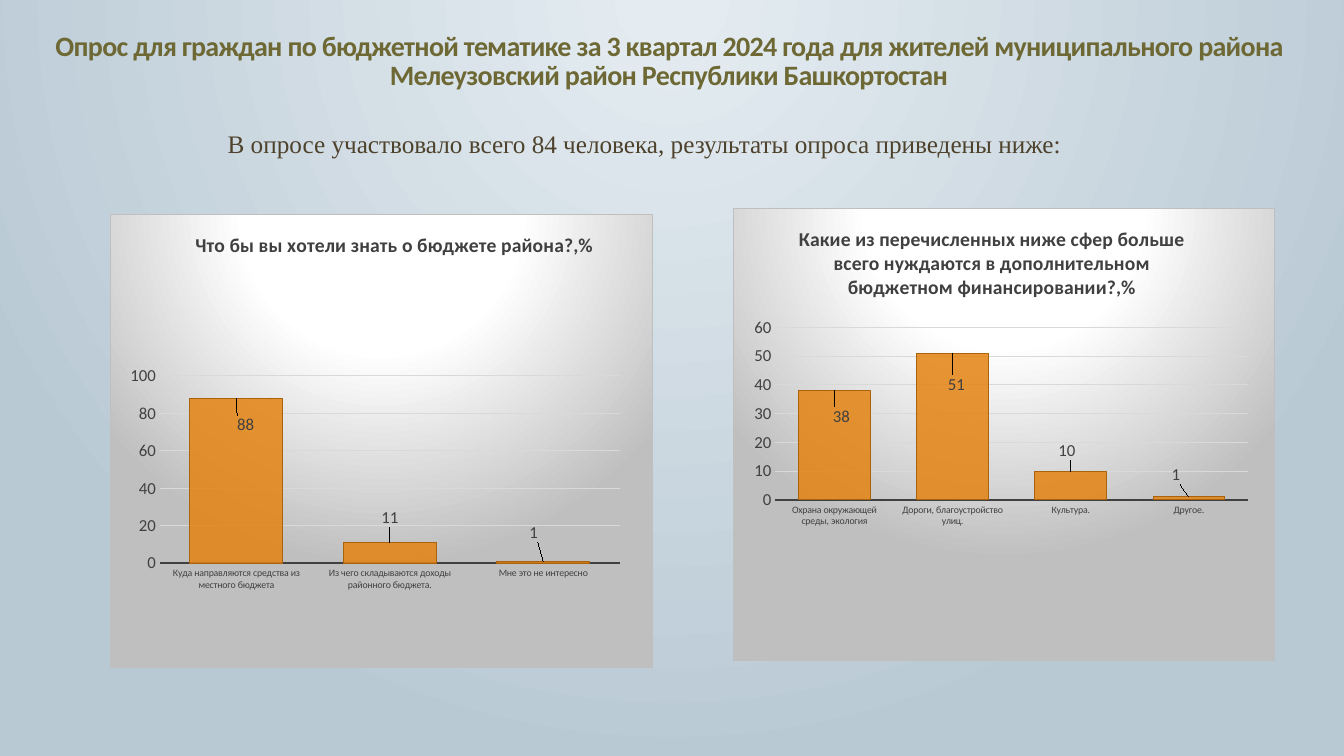
from dataclasses import dataclass

from lxml.etree import SubElement
from pptx import Presentation
from pptx.chart.data import CategoryChartData
from pptx.dml.color import RGBColor
from pptx.enum.chart import XL_CHART_TYPE, XL_LABEL_POSITION, XL_TICK_MARK
from pptx.enum.text import MSO_ANCHOR, PP_ALIGN
from pptx.oxml import parse_xml
from pptx.oxml.ns import nsdecls, qn
from pptx.util import Pt


@dataclass(frozen=True)
class Theme:
    heading: str = "6D6834"
    intro: str = "4E422C"
    chart_text: str = "404040"
    grid: str = "D9D9D9"
    border: str = "BFBFBF"
    bar: str = "E48312"
    bar_line: str = "AB620D"
    slide_stops: tuple = ((3, "E4ECF1"), (100, "B9C9D4"))
    chart_stops: tuple = ((0, "FFFFFF"), (39, "FFFFFF"), (100, "BFBFBF"))
    sans: str = "Calibri"
    serif: str = "Times New Roman"
    heading_size: int = 20
    intro_size: int = 18
    title_size: int = 14
    value_size: int = 12
    category_size: int = 7


@dataclass(frozen=True)
class Box:
    left: float
    top: float
    width: float
    height: float

    def lengths(self) -> tuple:
        return Pt(self.left), Pt(self.top), Pt(self.width), Pt(self.height)


@dataclass(frozen=True)
class Answer:
    text: str
    percent: int
    label_shift: tuple[float, float]


@dataclass(frozen=True)
class Question:
    text: str
    box: Box
    title_at: tuple[float, float]
    plot_area: tuple[float, float, float, float]
    axis_max: int
    axis_step: int
    answers: tuple[Answer, ...]


THEME = Theme()

QUESTIONS = (
    Question(
        "Что бы вы хотели знать о бюджете района?,%",
        Box(78.5, 152.5, 388, 324.7), (0.15, 0.03),
        (0.091, 0.357, 0.849, 0.413), 100, 20,
        (
            Answer("Куда направляются средства из местного бюджета", 88, (0.017, 0.09)),
            Answer("Из чего складываются доходы районного бюджета.", 11, (0, -0.024)),
            Answer("Мне это не интересно", 1, (-0.018, -0.033)),
        ),
    ),
    Question(
        "Какие из перечисленных ниже сфер больше всего нуждаются "
        "в дополнительном бюджетном финансировании?,%",
        Box(523.3, 148.5, 387.5, 324), (0.115, 0.03),
        (0.078, 0.263, 0.873, 0.381), 60, 10,
        (
            Answer("Охрана окружающей среды, экология", 38, (0.013, 0.088)),
            Answer("Дороги, благоустройство улиц.", 51, (0.007, 0.1)),
            Answer("Культура.", 10, (-0.007, -0.015)),
            Answer("Другое.", 1, (-0.024, -0.018)),
        ),
    ),
)


def style_font(font, name: str, size: int, color: str, bold: bool = False) -> None:
    font.name, font.size, font.bold = name, Pt(size), bold
    font.color.rgb = RGBColor.from_string(color)


def style_line(line, color: str, width: float) -> None:
    line.color.rgb = RGBColor.from_string(color)
    line.width = Pt(width)


def circle_gradient(stops: tuple, focus: tuple[int, int, int, int]):
    """Build a radial fill; focus is left, top, right, bottom in percent."""
    stop_xml = "".join(
        f'<a:gs pos="{pos * 1000}"><a:srgbClr val="{color}"/></a:gs>' for pos, color in stops
    )
    sides = " ".join(f'{side}="{value * 1000}"' for side, value in zip("ltrb", focus))
    return parse_xml(
        f'<a:gradFill {nsdecls("a")} rotWithShape="1"><a:gsLst>{stop_xml}</a:gsLst>'
        f'<a:path path="circle"><a:fillToRect {sides}/></a:path></a:gradFill>'
    )


def manual_layout(values: dict[str, float], inner: bool = False):
    target = '<c:layoutTarget val="inner"/>' if inner else ""
    modes = "".join(f'<c:{k}Mode val="edge"/>' for k in "xy") if "mode" in values else ""
    sizes = "".join(f'<c:{k} val="{v}"/>' for k, v in values.items() if k != "mode")
    return parse_xml(
        f'<c:layout {nsdecls("c")}><c:manualLayout>{target}{modes}{sizes}'
        "</c:manualLayout></c:layout>"
    )


def paint_background(slide) -> None:
    fill = slide.background.fill
    fill.gradient()
    bg_pr = slide.element.find(".//" + qn("p:bgPr"))
    bg_pr.replace(bg_pr.find(qn("a:gradFill")),
                  circle_gradient(THEME.slide_stops, (43, 0, 43, 100)))


def add_text(slide, box: Box, text: str, font: str, size: int, color: str,
             bold: bool = False, anchor=MSO_ANCHOR.TOP,
             line_spacing: float = 1.0, tracking: int = 0) -> None:
    tf = slide.shapes.add_textbox(*box.lengths()).text_frame
    tf.word_wrap = True
    tf.vertical_anchor = anchor
    p = tf.paragraphs[0]
    p.alignment = PP_ALIGN.CENTER
    p.line_spacing = line_spacing
    r = p.add_run()
    r.text = text
    style_font(r.font, font, size, color, bold)
    if tracking:
        r.font._element.set("spc", str(tracking))


def add_chart_title(chart, question: Question) -> None:
    title = chart.chart_title
    p = title.text_frame.paragraphs[0]
    r = p.add_run()
    r.text = question.text
    style_font(r.font, THEME.sans, THEME.title_size, THEME.chart_text, True)
    title.include_in_layout = False
    x, y = question.title_at
    el = title._element
    for old in el.findall(qn("c:layout")):
        el.remove(old)
    el.find(qn("c:tx")).addnext(manual_layout({"mode": 1, "x": x, "y": y}))


def style_axes(chart, question: Question) -> None:
    cat, val = chart.category_axis, chart.value_axis
    for axis, size in ((cat, THEME.category_size), (val, THEME.value_size)):
        axis.major_tick_mark = axis.minor_tick_mark = XL_TICK_MARK.NONE
        style_font(axis.tick_labels.font, THEME.sans, size, THEME.chart_text)
    style_line(cat.format.line, THEME.chart_text, 1.5)
    val.format.line.fill.background()
    style_line(val.major_gridlines.format.line, THEME.grid, 0.75)
    val.minimum_scale, val.maximum_scale = 0, question.axis_max
    val.major_unit = question.axis_step


def style_bars(plot, question: Question) -> None:
    plot.gap_width = 65
    plot.vary_by_categories = False
    series = plot.series[0]
    series.format.fill.solid()
    series.format.fill.fore_color.rgb = RGBColor.from_string(THEME.bar)
    color = series._element.find(qn("c:spPr")).find(".//" + qn("a:srgbClr"))
    SubElement(color, qn("a:alpha"), val="85000")
    style_line(series.format.line, THEME.bar_line, 0.75)
    for i, answer in enumerate(question.answers):
        label = series.points[i].data_label
        style_font(label.font, THEME.sans, THEME.value_size, THEME.chart_text)
        label.position = XL_LABEL_POSITION.OUTSIDE_END
        idx = series._element.find(f'.//{qn("c:dLbl")}/{qn("c:idx")}[@val="{i}"]')
        idx.addnext(manual_layout(dict(zip("xy", answer.label_shift))))


def add_question_chart(slide, question: Question) -> None:
    data = CategoryChartData()
    data.categories = [a.text for a in question.answers]
    data.add_series("Series 1", [a.percent for a in question.answers])
    chart = slide.shapes.add_chart(
        XL_CHART_TYPE.COLUMN_CLUSTERED, *question.box.lengths(), data).chart
    chart.has_legend = False
    chart.font.name, chart.font.size = THEME.sans, Pt(10)
    add_chart_title(chart, question)
    style_axes(chart, question)
    style_bars(chart.plots[0], question)

    space = chart._chartSpace
    area = space.find(".//" + qn("c:plotArea"))
    for old in area.findall(qn("c:layout")):
        area.remove(old)
    area.insert(0, manual_layout({"mode": 1, **dict(zip("xywh", question.plot_area))}, True))
    sp_pr = parse_xml(
        f'<c:spPr {nsdecls("c", "a")}><a:ln w="{Pt(0.75)}"><a:solidFill>'
        f'<a:srgbClr val="{THEME.border}"/></a:solidFill></a:ln></c:spPr>')
    sp_pr.insert(0, circle_gradient(THEME.chart_stops, (50, -80, 50, 180)))
    space.find(qn("c:chart")).addnext(sp_pr)


def main() -> None:
    prs = Presentation()
    prs.slide_width, prs.slide_height = Pt(960), Pt(540)
    s = prs.slides.add_slide(prs.slide_layouts[6])
    paint_background(s)
    add_text(s, Box(21.6, 11.5, 912.2, 56.9),
             "Опрос для граждан по бюджетной тематике за 3 квартал 2024 года для жителей "
             "муниципального района Мелеузовский район Республики Башкортостан",
             THEME.sans, THEME.heading_size, THEME.heading, True,
             MSO_ANCHOR.BOTTOM, 0.85, -50)
    add_text(s, Box(120.2, 87.8, 680.4, 28.8),
             "В опросе участвовало всего 84 человека, результаты опроса приведены ниже:",
             THEME.serif, THEME.intro_size, THEME.intro)
    for question in QUESTIONS:
        add_question_chart(s, question)
    prs.save("out.pptx")


if __name__ == "__main__":
    main()
